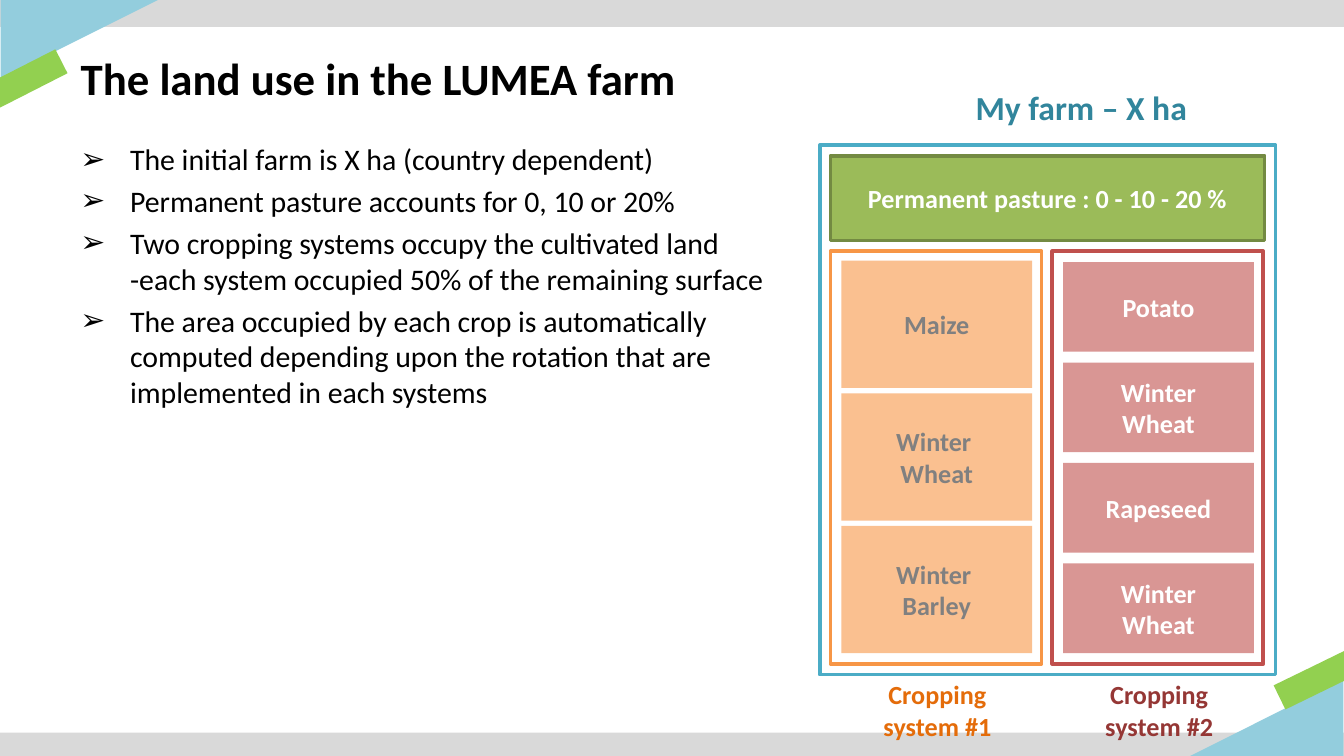
import pptx
import pptx.util
import pptx.dml.color
import pptx.enum.shapes
import pptx.enum.text
import lxml.etree

Inches, Pt = pptx.util.Inches, pptx.util.Pt
MSO = pptx.enum.shapes.MSO_SHAPE
ALIGN = pptx.enum.text.PP_ALIGN
ANCHOR = pptx.enum.text.MSO_ANCHOR
FIT = pptx.enum.text.MSO_AUTO_SIZE

# Content
TITLE = "The land use in the LUMEA farm"
POINTS = [
    "The initial farm is X ha (country dependent)",
    "Permanent pasture accounts for 0, 10 or 20%",
    "Two cropping systems occupy the cultivated land "
    "-each system occupied 50% of the remaining surface",
    "The area occupied by each crop is automatically computed depending "
    "upon the rotation that are implemented in each systems",
]
FARM = "My farm – X ha"
PASTURE = "Permanent pasture : 0 - 10 - 20 %"
SYSTEMS = [
    {"name": "Cropping system #1", "left": 6.18, "top": 1.94, "gap": 0.04,
     "crops": ["Maize", "Winter \nWheat", "Winter \nBarley"],
     "edge": "F79646", "fill": "FAC090", "ink": "808080", "label": "E46C0A"},
    {"name": "Cropping system #2", "left": 7.83, "top": 1.95, "gap": 0.08,
     "crops": ["Potato", "Winter\nWheat", "Rapeseed", "Winter\nWheat"],
     "edge": "C0504D", "fill": "D99694", "ink": "FFFFFF", "label": "953735"},
]

THEME = {
    "font": "Calibri", "black": "000000", "white": "FFFFFF",
    "gray": "D9D9D9", "sky": "93CDDD", "lime": "92D050",
    "farm": "4BACC6", "head": "31859C", "field": "9BBB59", "hedge": "738A42",
    "title": 24, "sub": 18, "body": 16, "small": 14,
}

# Corner and edge trim: shape, box, rotation, colour
TRIM = [
    (MSO.RECTANGLE, (0, 0, 10, 0.2), 0, "gray"),
    (MSO.ISOSCELES_TRIANGLE, (0.3, -0.3, 0.59, 1.18), 90, "sky"),
    (MSO.RECTANGLE, (-0.1, 0.49, 0.59, 0.2), 333, "lime"),
    (MSO.RECTANGLE, (0, 5.45, 10, 0.2), 180, "gray"),
    (MSO.ISOSCELES_TRIANGLE, (9.11, 4.76, 0.59, 1.18), 270, "sky"),
    (MSO.RECTANGLE, (9.49, 4.96, 0.59, 0.2), 154, "lime"),
]


def rgb(code):
    return pptx.dml.color.RGBColor.from_string(code)


def write(para, text, size, ink, bold=True):
    for i, line in enumerate(text.split("\n")):
        if i:
            para.add_line_break()
        run = para.add_run()
        run.text = line
        run.font.name = THEME["font"]
        run.font.size = Pt(size)
        run.font.bold = bold
        run.font.color.rgb = rgb(ink)


def block(slide, box, fill, edge=None, text=None, ink=None, kind=MSO.RECTANGLE):
    shape = slide.shapes.add_shape(kind, *map(Inches, box))
    shape.shadow.inherit = False
    shape.fill.solid()
    shape.fill.fore_color.rgb = rgb(fill)
    if edge:
        shape.line.color.rgb = rgb(edge)
        shape.line.width = Pt(2)
    else:
        shape.line.fill.background()
    if text:
        frame = shape.text_frame
        frame.word_wrap = True
        frame.vertical_anchor = ANCHOR.MIDDLE
        frame.paragraphs[0].alignment = ALIGN.CENTER
        write(frame.paragraphs[0], text, THEME["small"], ink)
    return shape


def textbox(slide, box, wrap=True, fit=FIT.SHAPE_TO_FIT_TEXT):
    frame = slide.shapes.add_textbox(*map(Inches, box)).text_frame
    frame.word_wrap = wrap
    frame.auto_size = fit
    return frame


def bullet(para, mark):
    props = para._p.get_or_add_pPr()
    props.set("marL", str(Inches(0.37)))
    props.set("indent", str(-Inches(0.37)))
    space = "http://schemas.openxmlformats.org/drawingml/2006/main"
    lxml.etree.SubElement(props, f"{{{space}}}buFont", typeface="Arial")
    lxml.etree.SubElement(props, f"{{{space}}}buChar", char=mark)


def main():
    # Widescreen 16:9 page
    deck = pptx.Presentation()
    deck.slide_width, deck.slide_height = Inches(10), Inches(10 * 9 / 16)
    slide = deck.slides.add_slide(deck.slide_layouts[5])

    # Trim
    for kind, box, turn, tone in TRIM:
        part = block(slide, box, THEME[tone], kind=kind)
        part.rotation = turn
        if kind == MSO.ISOSCELES_TRIANGLE:
            part.adjustments[0] = 0

    # Title
    title = slide.shapes.title
    title.left, title.top = Inches(0.5), Inches(0.23)
    title.width, title.height = Inches(9), Inches(0.7)
    frame = title.text_frame
    frame.auto_size = FIT.NONE
    frame.vertical_anchor = ANCHOR.MIDDLE
    frame.paragraphs[0].alignment = ALIGN.LEFT
    write(frame.paragraphs[0], TITLE, THEME["title"], THEME["black"])

    # Bullet points
    frame = textbox(slide, (0.5, 1, 5.44, 4.02), fit=FIT.NONE)
    for i, point in enumerate(POINTS):
        para = frame.add_paragraph() if i else frame.paragraphs[0]
        para.space_before = Pt(0.2 * THEME["body"])
        bullet(para, "➢")
        write(para, point, THEME["body"], THEME["black"], bold=False)

    # Farm frame and pasture
    block(slide, (6.1, 1.08, 3.39, 3.94), THEME["white"], THEME["farm"])
    block(slide, (6.18, 1.16, 3.23, 0.63), THEME["field"], THEME["hedge"],
          PASTURE, THEME["white"])

    # Cropping systems: equal crop plots fill each column
    bottom = 4.86
    for plan in SYSTEMS:
        left, top, gap = plan["left"], plan["top"], plan["gap"]
        crops = plan["crops"]
        block(slide, (left, 1.87, 1.57, 3.07), THEME["white"], plan["edge"])
        high = (bottom - top - gap * (len(crops) - 1)) / len(crops)
        for i, crop in enumerate(crops):
            block(slide, (left + 0.08, top + i * (high + gap), 1.42, high),
                  plan["fill"], text=crop, ink=plan["ink"])
        frame = textbox(slide, (left + 0.16, 5, 1.27, 0.57))
        frame.paragraphs[0].alignment = ALIGN.CENTER
        write(frame.paragraphs[0], plan["name"], THEME["small"], plan["label"])

    # Farm heading
    frame = textbox(slide, (7.16, 0.6, 1.79, 0.4), wrap=False)
    write(frame.paragraphs[0], FARM, THEME["sub"], THEME["head"])

    deck.save("out.pptx")


if __name__ == "__main__":
    main()
